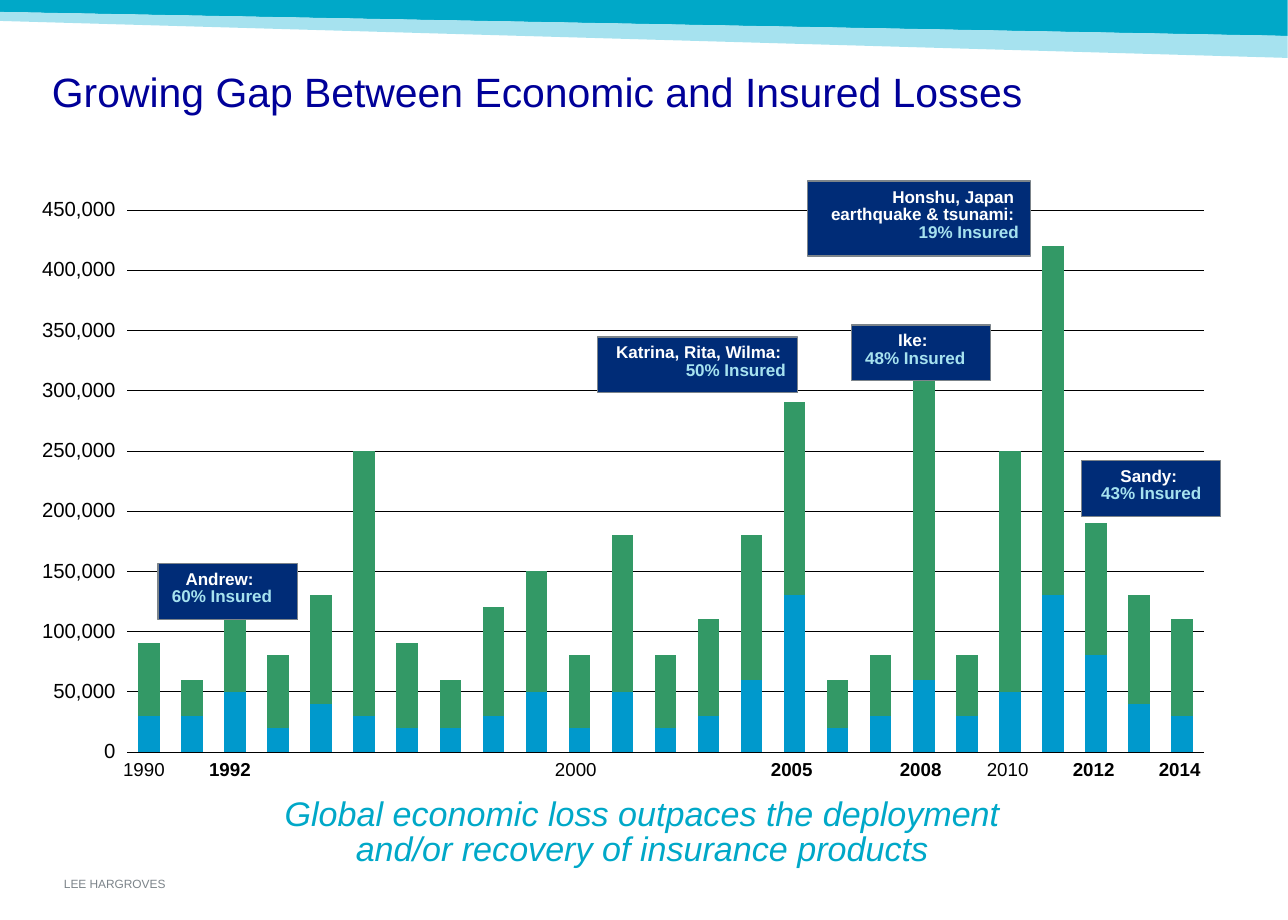
from lxml import etree
from pptx import Presentation
from pptx import util as u
from pptx.chart import data
from pptx.dml.color import RGBColor
from pptx.enum import chart as ch, shapes, text
from pptx.oxml import parse_xml
from pptx.oxml.ns import nsdecls

PX = 7452  # EMU in one px
FONT = "Arial"
WHITE = RGBColor(0xFF, 0xFF, 0xFF)
BLACK = RGBColor(0, 0, 0)
TEAL = RGBColor(0x00, 0xA8, 0xC8)
PALE = RGBColor(0xA6, 0xE2, 0xEF)
NAVY = RGBColor(0x00, 0x2C, 0x77)
GREY = RGBColor(0x7C, 0x84, 0x8A)
TITLE_BLUE = RGBColor(0x00, 0x00, 0x99)
INSURED_BLUE = RGBColor(0x00, 0x99, 0xCC)
ECONOMIC_GREEN = RGBColor(0x33, 0x99, 0x66)

# Losses from 1990 to 2014, in thousands
INSURED = [30, 30, 50, 20, 40, 30, 20, 20, 30, 50, 20, 50, 20,
           30, 60, 130, 20, 30, 60, 30, 50, 130, 80, 40, 30]
ECONOMIC = [60, 30, 60, 60, 90, 220, 70, 40, 90, 100, 60, 130, 60,
            80, 120, 160, 40, 50, 250, 50, 200, 290, 110, 90, 80]

# Marked years, and whether they are bold
YEARS = {1990: False, 1992: True, 2000: False, 2005: True,
         2008: True, 2010: False, 2012: True, 2014: True}

CENTER, RIGHT = text.PP_ALIGN.CENTER, text.PP_ALIGN.RIGHT
EVENTS = [  # event, share, box, left inset, alignment
    ("Katrina, Rita, Wilma: ", "50% Insured", (598, 337, 200, 56), 0, RIGHT),
    ("Ike: ", "48% Insured", (852, 325, 139, 56), 0, CENTER),
    ("Honshu, Japan \vearthquake & tsunami: ", "19% Insured",
     (808, 181, 223, 75), 0, RIGHT),
    ("Andrew: ", "60% Insured", (158, 564, 140, 56), 0, CENTER),
    ("Sandy: ", "43% Insured", (1082, 461, 139, 56), 12, CENTER),
]


def px(*lengths):
    return [u.Emu(length * PX) for length in lengths]


def set_insets(frame, left, top, right, bottom):
    (frame.margin_left, frame.margin_top,
     frame.margin_right, frame.margin_bottom) = px(left, top, right, bottom)


def style_paragraph(paragraph, size, color, align=None, spacing=None,
                    bold=False, italic=False):
    paragraph.alignment = align
    paragraph.line_spacing = spacing
    for run in paragraph.runs:
        font = run.font
        font.name, font.size = FONT, u.Pt(size)
        font.bold, font.italic = bold, italic
        font.color.rgb = color


def add_label(slide, wording, box, insets=(12, 6, 12, 6),
              anchor=text.MSO_ANCHOR.TOP, **style):
    frame = slide.shapes.add_textbox(*px(*box)).text_frame
    frame.word_wrap = True
    frame.vertical_anchor = anchor
    set_insets(frame, *insets)
    frame.text = wording
    style_paragraph(frame.paragraphs[0], **style)


def add_band(slide, corners, color):
    builder = slide.shapes.build_freeform(*corners[0], scale=PX)
    builder.add_line_segments(corners[1:], close=True)
    band = builder.convert_to_shape()
    band.shadow.inherit = False
    band.fill.solid()
    band.fill.fore_color.rgb = color
    band.line.fill.background()


def add_event(slide, event, share, box, left_inset, align):
    callout = slide.shapes.add_shape(shapes.MSO_SHAPE.RECTANGLE, *px(*box))
    callout.shadow.inherit = False
    callout.fill.solid()
    callout.fill.fore_color.rgb = NAVY
    callout.line.color.rgb = GREY
    callout.line.width = u.Pt(0.75)
    frame = callout.text_frame
    frame.word_wrap = False
    frame.vertical_anchor = text.MSO_ANCHOR.MIDDLE
    set_insets(frame, left_inset, 0, 12, 6)
    frame.text = event
    frame.add_paragraph().text = share
    for paragraph, color in zip(frame.paragraphs, (WHITE, PALE)):
        style_paragraph(paragraph, 10, color, align, 0.86, bold=True)


def place_plot(chart, x, y, w, h):
    plot_area = chart.plots[0]._element.getparent()
    for old in plot_area.findall("{*}layout"):
        plot_area.remove(old)
    layout = parse_xml(f"<c:layout {nsdecls('c')}><c:manualLayout/></c:layout>")
    settings = {"layoutTarget": "inner", "xMode": "edge", "yMode": "edge",
                "x": x, "y": y, "w": w, "h": h}
    namespace = etree.QName(layout).namespace
    for tag, value in settings.items():
        etree.SubElement(layout[0], f"{{{namespace}}}{tag}", val=str(value))
    plot_area.insert(0, layout)


def add_loss_chart(slide, box):
    losses = data.CategoryChartData(number_format="#,##0")
    losses.categories = [str(n + 1) for n in range(len(INSURED))]
    losses.add_series("Series 1", [value * 1000 for value in INSURED])
    losses.add_series("Series 2", [value * 1000 for value in ECONOMIC])
    chart = slide.shapes.add_chart(
        ch.XL_CHART_TYPE.COLUMN_STACKED, *px(*box), losses).chart
    chart.has_legend = chart.has_title = False
    chart.font.name, chart.font.size = FONT, u.Pt(12)
    chart.font.color.rgb = BLACK
    place_plot(chart, 0.066, 0.076, 0.903, 0.765)

    # Columns
    plot = chart.plots[0]
    plot.gap_width, plot.overlap = 100, 100
    plot.vary_by_categories = False
    for series, color in zip(plot.series, (INSURED_BLUE, ECONOMIC_GREEN)):
        series.format.fill.solid()
        series.format.fill.fore_color.rgb = color

    # Axes
    chart.category_axis.visible = False
    amounts = chart.value_axis
    amounts.minimum_scale, amounts.maximum_scale = 0, 450000
    amounts.major_unit = 50000
    amounts.major_tick_mark = ch.XL_TICK_MARK.OUTSIDE
    amounts.tick_labels.number_format = "#,##0"
    amounts.tick_labels.number_format_is_linked = False
    amounts.format.line.fill.background()
    grid = amounts.major_gridlines.format.line
    grid.color.rgb = BLACK
    grid.width = u.Pt(0.15)


def main():
    deck = Presentation()
    deck.slide_width, deck.slide_height = u.Inches(10.5), u.Inches(7.5)
    slide = deck.slides.add_slide(deck.slide_layouts[6])

    # Footer and top bands
    add_label(slide, "LEE HARGROVES", (64, 877, 388, 14), (0, 0, 0, 0),
              text.MSO_ANCHOR.BOTTOM, size=7, color=GREY)
    add_band(slide, [(0, 0), (1288, 0), (1288, 36), (0, 12)], TEAL)
    add_band(slide, [(0, 12), (1288, 36), (1288, 58), (0, 21)], PALE)

    # Title
    add_label(slide, "Growing Gap Between Economic and Insured Losses",
              (52, 70, 1093, 50), (0, 6, 12, 6), text.MSO_ANCHOR.MIDDLE,
              size=24, color=TITLE_BLUE, spacing=0.83)

    # Chart, conclusion and years
    add_loss_chart(slide, (42, 156, 1199, 709))
    add_label(slide, "Global economic loss outpaces the deployment "
              "and/or recovery of insurance products", (265, 793, 755, 83),
              size=20, color=TEAL, align=CENTER, spacing=0.86, italic=True)
    for year, bold in YEARS.items():
        middle = 144 + (year - 1990) * 216 // 5
        add_label(slide, str(year), (middle - 55, 755, 110, 32), size=11,
                  color=BLACK, align=CENTER, spacing=0.86, bold=bold)

    # Event callouts
    for event in EVENTS:
        add_event(slide, *event)

    deck.save("out.pptx")


if __name__ == "__main__":
    main()
